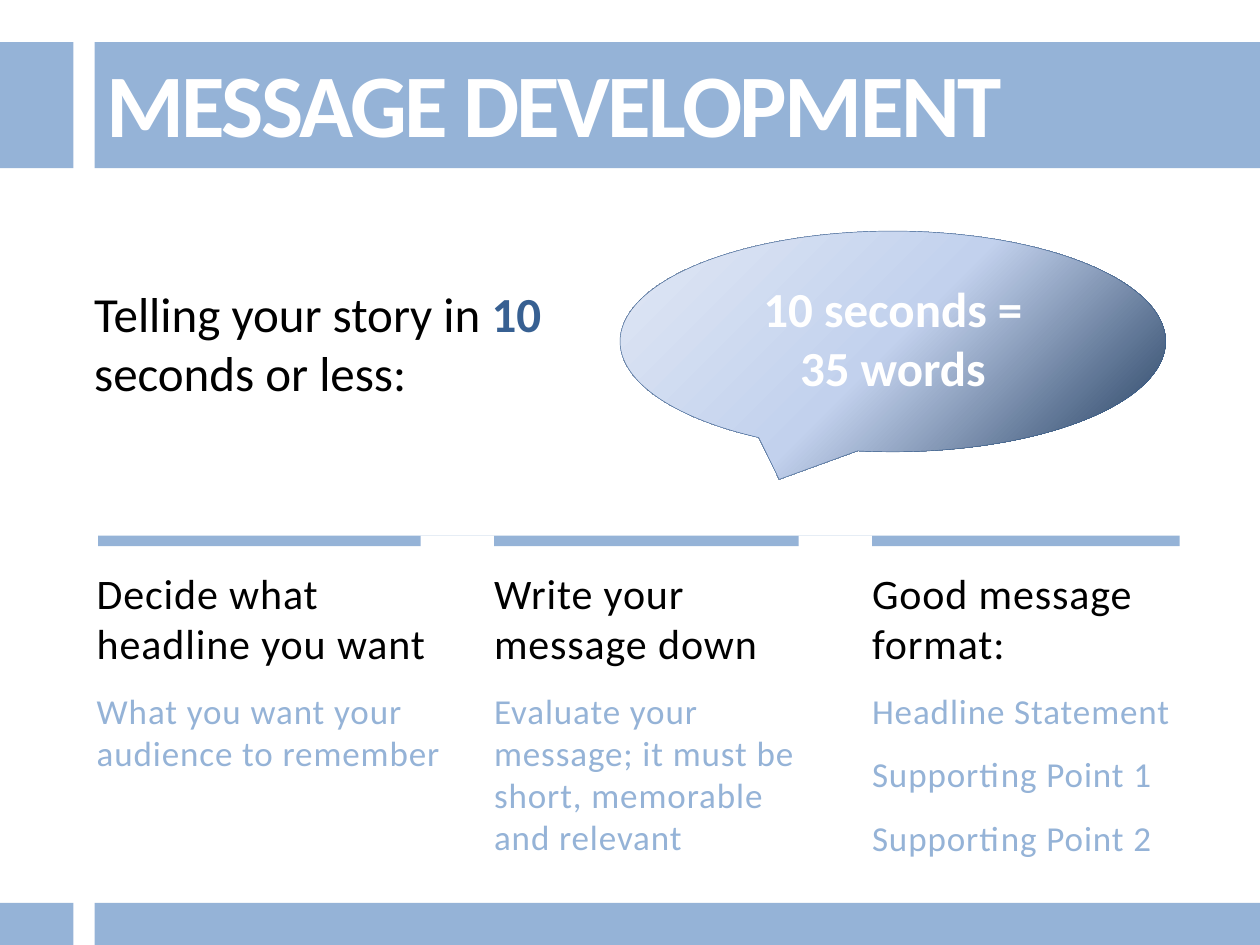
from copy import deepcopy

from pptx import Presentation
from pptx.dml.color import RGBColor
from pptx.enum.shapes import MSO_SHAPE
from pptx.enum.text import MSO_AUTO_SIZE, PP_ALIGN
from pptx.oxml.ns import qn
from pptx.util import Cm, Pt

RECTANGLE = MSO_SHAPE.RECTANGLE
CALLOUT = MSO_SHAPE.OVAL_CALLOUT
GROW = MSO_AUTO_SIZE.SHAPE_TO_FIT_TEXT
CENTER = PP_ALIGN.CENTER

WHITE = RGBColor(0xFF, 0xFF, 0xFF)
BLACK = RGBColor(0x00, 0x00, 0x00)
SKY = RGBColor(0x95, 0xB3, 0xD7)
ACCENT = RGBColor(0x37, 0x60, 0x92)
OUTLINE = RGBColor(0x3A, 0x5F, 0x8C)
BUBBLE_STOPS = (
    (0, RGBColor(0x25, 0x40, 0x61)),
    (0.5, RGBColor(0xC2, 0xD1, 0xED)),
    (1, RGBColor(0xE1, 0xE8, 0xF5)),
)

PAGE_WIDTH, PAGE_HEIGHT = 25.4, 19.05
GAP_WIDTH = 1.48
COLUMNS = (
    (1.95, 7.2, "Decide what headline you want",
     ("What you want your audience to remember",)),
    (9.96, 6.12, "Write your message down",
     ("Evaluate your message; it must be short, memorable and relevant",)),
    (17.58, 6.12, "Good message format:",
     ("Headline Statement", "Supporting Point 1", "Supporting Point 2")),
)


def add_block(page, left, top, width, height, color):
    """Add a plain rectangle without outline."""
    block = page.shapes.add_shape(
        RECTANGLE, Cm(left), Cm(top), Cm(width), Cm(height))
    block.shadow.inherit = False
    block.fill.solid()
    block.fill.fore_color.rgb = color
    block.line.fill.background()


def add_text_frame(page, left, top, width, height, padded=False):
    """Add a wrapping text box and return its frame."""
    box = page.shapes.add_textbox(Cm(left), Cm(top), Cm(width), Cm(height))
    frame = box.text_frame
    frame.word_wrap = True
    frame.auto_size = GROW
    if not padded:
        frame.margin_left = frame.margin_right = 0
        frame.margin_top = frame.margin_bottom = 0
    return frame


def style_font(font, size, color, bold=False, spacing=0):
    """Set the face, size, colour, weight and letter spacing in points."""
    font.name = "Calibri"
    font.size = Pt(size)
    font.color.rgb = color
    font.bold = bold
    if spacing:
        font._rPr.set("spc", str(round(spacing * 100)))


def add_bands(page, left, top, width, height):
    """Add the title band, the foot band and the white strip across both."""
    add_block(page, left, top + 0.85, width, 2.54, SKY)
    add_block(page, left, top + height - 0.85, width, 0.85, SKY)
    add_block(page, left + GAP_WIDTH, top + 0.64, 0.43, height - 0.64, WHITE)


def add_title(page, left, top, width, height):
    """Add the slide title."""
    para = add_text_frame(page, left, top, width, height, True).paragraphs[0]
    para.text = "MESSAGE DEVELOPMENT"
    style_font(para.font, 51, WHITE, True, -1.5)


def add_lead(page, left, top, width, height):
    """Add the opening line with its highlighted number."""
    para = add_text_frame(page, left, top, width, height).paragraphs[0]
    for text, color, bold in (("Telling your story in ", BLACK, False),
                              ("10", ACCENT, True),
                              (" seconds or less:", BLACK, False)):
        span = para.add_run()
        span.text = text
        style_font(span.font, 28, color, bold)


def add_bubble(page, left, top, width, height):
    """Add the shaded speech bubble."""
    bubble = page.shapes.add_shape(
        CALLOUT, Cm(left), Cm(top), Cm(width), Cm(height))
    bubble.shadow.inherit = False
    bubble.line.color.rgb = OUTLINE
    bubble.line.width = Pt(0.25)
    fill = bubble.fill
    fill.gradient()
    fill.gradient_angle = 135
    stop_list = next(bubble._element.iter(qn("a:gsLst")))
    stop_list.append(deepcopy(stop_list[-1]))
    for stop, (position, color) in zip(fill.gradient_stops, BUBBLE_STOPS):
        stop.position = position
        stop.color.rgb = color


def add_bubble_text(page, left, top, width, height):
    """Add the two centred lines over the speech bubble."""
    frame = add_text_frame(page, left, top, width, height, True)
    frame.text = "10 seconds =\n35 words"
    for para in frame.paragraphs:
        para.alignment = CENTER
        style_font(para.font, 28, WHITE, True)


def add_column(page, left, top, width, height, heading, points):
    """Add a heading with its points below."""
    frame = add_text_frame(page, left, top, width, height)
    para = frame.paragraphs[0]
    para.text = heading
    style_font(para.font, 24, BLACK, spacing=0.5)
    for point in points:
        para = frame.add_paragraph()
        para.text = point
        para.space_before = Pt(12.2)
        style_font(para.font, 20, SKY, spacing=0.5)


def add_columns(page, left, top, width, height):
    """Add the broken rule and the three columns under it."""
    add_block(page, left, top, width, 0.21, SKY)
    for column_left, *_ in COLUMNS[1:]:
        add_block(page, column_left - GAP_WIDTH, top, GAP_WIDTH, 1.27, WHITE)
    for column_left, column_width, heading, points in COLUMNS:
        add_column(page, column_left, top + 0.64, column_width,
                   height - 0.64, heading, points)


def main():
    """Build and save the slide."""
    deck = Presentation()
    deck.slide_width, deck.slide_height = Cm(PAGE_WIDTH), Cm(PAGE_HEIGHT)
    page = deck.slides.add_slide(deck.slide_layouts[6])
    add_bands(page, 0, 0, PAGE_WIDTH, PAGE_HEIGHT)
    add_title(page, 1.9, 0.85, 23.5, 2.43)
    add_lead(page, 1.9, 5.72, 9.32, 2.39)
    add_bubble(page, 12.5, 4.66, 11, 4.45)
    add_bubble_text(page, 12.5, 5.5, 11, 2.65)
    add_columns(page, 1.98, 10.8, 21.8, 6.53)
    deck.save("out.pptx")


if __name__ == "__main__":
    main()
